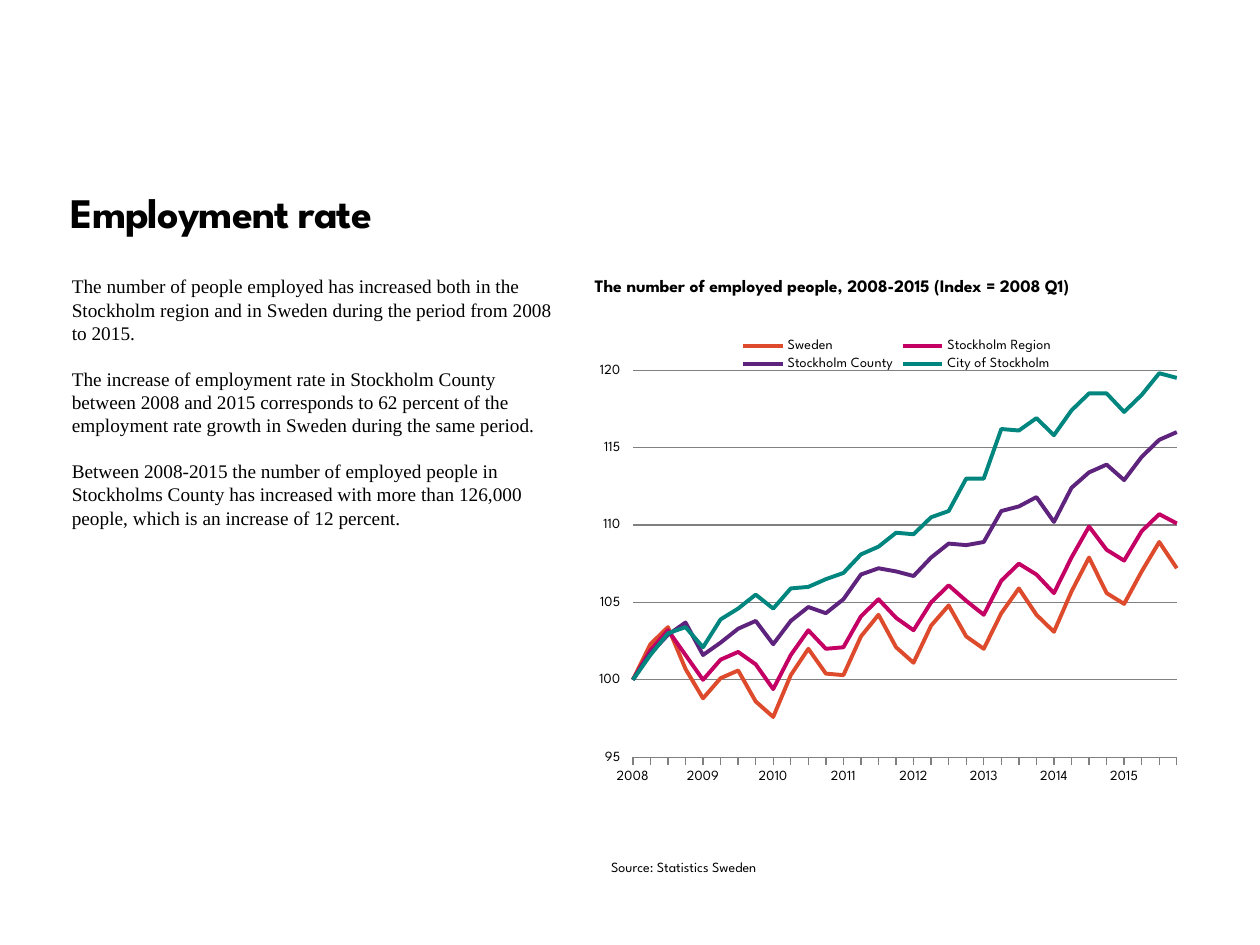
from dataclasses import dataclass, field

from lxml.etree import SubElement
from pptx import Presentation
from pptx.chart.data import CategoryChartData
from pptx.dml.color import RGBColor
from pptx.enum.chart import XL_CHART_TYPE, XL_LEGEND_POSITION, XL_TICK_MARK
from pptx.oxml import parse_xml
from pptx.oxml.ns import nsdecls, qn
from pptx.util import Inches, Pt

BLACK = RGBColor(0x00, 0x00, 0x00)
GREY = RGBColor(0x80, 0x80, 0x80)
ORANGE = RGBColor(0xDD, 0x4A, 0x2C)
PINK = RGBColor(0xC4, 0x00, 0x64)
PURPLE = RGBColor(0x5D, 0x23, 0x7D)
TEAL = RGBColor(0x00, 0x86, 0x7F)

HEADING_FONT = "League Spartan"
BODY_FONT = "Times New Roman"


@dataclass
class TextBlock:
    left: float
    top: float
    width: float
    height: float
    paragraphs: list[str]
    font: dict
    spacing: dict = field(default_factory=dict)
    tracking: int = 0


@dataclass
class IndexSeries:
    name: str
    color: RGBColor
    values: list[float]


TEXT_BLOCKS = [
    TextBlock(0.56, 1.49, 6, 0.88, ["Employment rate"],
              {"name": HEADING_FONT, "size": Pt(24), "bold": True},
              {"line_spacing": Pt(28)}, tracking=-50),
    TextBlock(0.57, 2.18, 3.9, 3.49, [
        "The number of people employed has increased both in the Stockholm "
        "region and in Sweden during the period from 2008 to 2015.",
        "The increase of employment rate in Stockholm County between 2008 and "
        "2015 corresponds to 62 percent of the employment rate growth in "
        "Sweden during the same period.",
        "Between 2008-2015 the number of employed people in Stockholms County "
        "has increased with more than 126,000 people, which is an increase "
        "of 12 percent.",
    ], {"name": BODY_FONT, "size": Pt(11)},
        {"line_spacing": Pt(13.2), "space_after": Pt(13.2)}),
    TextBlock(4.72, 2.18, 4.78, 0.41,
              ["The number of employed people, 2008-2015 (Index = 2008 Q1)"],
              {"name": HEADING_FONT, "size": Pt(10), "bold": True}),
    TextBlock(4.85, 6.81, 2.28, 0.25, ["Source: Statistics Sweden"],
              {"name": HEADING_FONT, "size": Pt(8)}),
]

# One value a quarter, from 2008 Q1 to 2015 Q4
SERIES = [
    IndexSeries("Sweden", ORANGE, [
        100, 102.3, 103.4, 100.7, 98.8, 100.1, 100.6, 98.6,
        97.6, 100.3, 102, 100.4, 100.3, 102.8, 104.2, 102.1,
        101.1, 103.5, 104.8, 102.8, 102, 104.3, 105.9, 104.2,
        103.1, 105.7, 107.9, 105.6, 104.9, 107, 108.9, 107.2]),
    IndexSeries("Stockholm Region", PINK, [
        100, 101.9, 103.2, 101.6, 100, 101.3, 101.8, 101,
        99.4, 101.6, 103.2, 102, 102.1, 104.1, 105.2, 104,
        103.2, 105, 106.1, 105.1, 104.2, 106.4, 107.5, 106.8,
        105.6, 107.9, 109.9, 108.4, 107.7, 109.6, 110.7, 110.1]),
    IndexSeries("Stockholm County", PURPLE, [
        100, 101.7, 102.9, 103.7, 101.6, 102.4, 103.3, 103.8,
        102.3, 103.8, 104.7, 104.3, 105.2, 106.8, 107.2, 107,
        106.7, 107.9, 108.8, 108.7, 108.9, 110.9, 111.2, 111.8,
        110.2, 112.4, 113.4, 113.9, 112.9, 114.4, 115.5, 116]),
    IndexSeries("City of Stockholm", TEAL, [
        100, 101.6, 103, 103.4, 102.1, 103.9, 104.6, 105.5,
        104.6, 105.9, 106, 106.5, 106.9, 108.1, 108.6, 109.5,
        109.4, 110.5, 110.9, 113, 113, 116.2, 116.1, 116.9,
        115.8, 117.4, 118.5, 118.5, 117.3, 118.4, 119.8, 119.5]),
]


def set_values(target, values: dict) -> None:
    for name, value in values.items():
        setattr(target, name, value)


def add_text(page, block: TextBlock) -> None:
    box = page.shapes.add_textbox(Inches(block.left), Inches(block.top),
                                  Inches(block.width), Inches(block.height))
    frame = box.text_frame
    set_values(frame, {"word_wrap": True, "margin_left": 0, "margin_top": 0,
                       "margin_right": 0, "margin_bottom": 0})
    for number, text in enumerate(block.paragraphs):
        para = frame.add_paragraph() if number else frame.paragraphs[0]
        set_values(para, block.spacing)
        span = para.add_run()
        span.text = text
        set_values(span.font, block.font)
        span.font.color.rgb = BLACK
        if block.tracking:
            span.font._element.set("spc", str(block.tracking))


def make_setting(tag: str, value: str):
    return parse_xml(f'<c:{tag} {nsdecls("c")} val="{value}"/>')


def make_layout(x: float, y: float, width: float, height: float, inner: bool):
    layout = parse_xml(f"<c:layout {nsdecls('c')}/>")
    manual = SubElement(layout, qn("c:manualLayout"))
    settings = {"layoutTarget": "inner"} if inner else {}
    settings |= {"xMode": "edge", "yMode": "edge",
                 "x": x, "y": y, "w": width, "h": height}
    for tag, value in settings.items():
        SubElement(manual, qn(f"c:{tag}")).set("val", str(value))
    return layout


def add_index_chart(page) -> None:
    data = CategoryChartData(number_format="0.0")
    data.categories = [str(year) if quarter == 0 else ""
                       for year in range(2008, 2016) for quarter in range(4)]
    for series in SERIES:
        data.add_series(series.name, series.values)
    chart = page.shapes.add_chart(
        XL_CHART_TYPE.LINE, Inches(4.63), Inches(2.58),
        Inches(4.98), Inches(3.77), data).chart
    set_values(chart.font, {"name": HEADING_FONT, "size": Pt(8)})
    chart.font.color.rgb = BLACK
    chart.has_title = False

    # Lines
    for line, series in zip(chart.plots[0].series, SERIES):
        line.smooth = False
        line.format.line.color.rgb = series.color
        line.format.line.width = Pt(2.25)

    # Axes
    years, index = chart.category_axis, chart.value_axis
    set_values(index, {"minimum_scale": 95, "maximum_scale": 120,
                       "major_unit": 5, "has_major_gridlines": True,
                       "major_tick_mark": XL_TICK_MARK.OUTSIDE})
    set_values(index.tick_labels, {"number_format": "0",
                                   "number_format_is_linked": False})
    index.format.line.fill.background()
    years.major_tick_mark = XL_TICK_MARK.OUTSIDE
    for line in (years.format.line, index.major_gridlines.format.line):
        line.color.rgb = GREY
        line.width = Pt(0.75)

    # Points sit on the tick marks, with one tick a quarter
    index._element.find(qn("c:crosses")).addnext(
        make_setting("crossBetween", "midCat"))
    no_multi_level = years._element.find(qn("c:noMultiLvlLbl"))
    for tag in ("tickLblSkip", "tickMarkSkip"):
        no_multi_level.addprevious(make_setting(tag, "1"))

    # Legend and plot positions
    chart.has_legend = True
    set_values(chart.legend, {"position": XL_LEGEND_POSITION.TOP,
                              "include_in_layout": False})
    set_values(chart.legend.font, {"name": HEADING_FONT, "size": Pt(8)})
    chart.legend._element.find(qn("c:legendPos")).addnext(
        make_layout(0.25, 0.02, 0.5, 0.09, inner=False))
    plot_area = chart._chartSpace.chart.plotArea
    for layout in plot_area.findall(qn("c:layout")):
        plot_area.remove(layout)
    plot_area.insert(0, make_layout(0.079, 0.095, 0.867, 0.815, inner=True))


def main() -> None:
    deck = Presentation()
    deck.slide_width, deck.slide_height = Inches(10), Inches(7.5)
    page = deck.slides.add_slide(deck.slide_layouts[6])
    for block in TEXT_BLOCKS:
        add_text(page, block)
    add_index_chart(page)
    deck.save("out.pptx")


if __name__ == "__main__":
    main()
